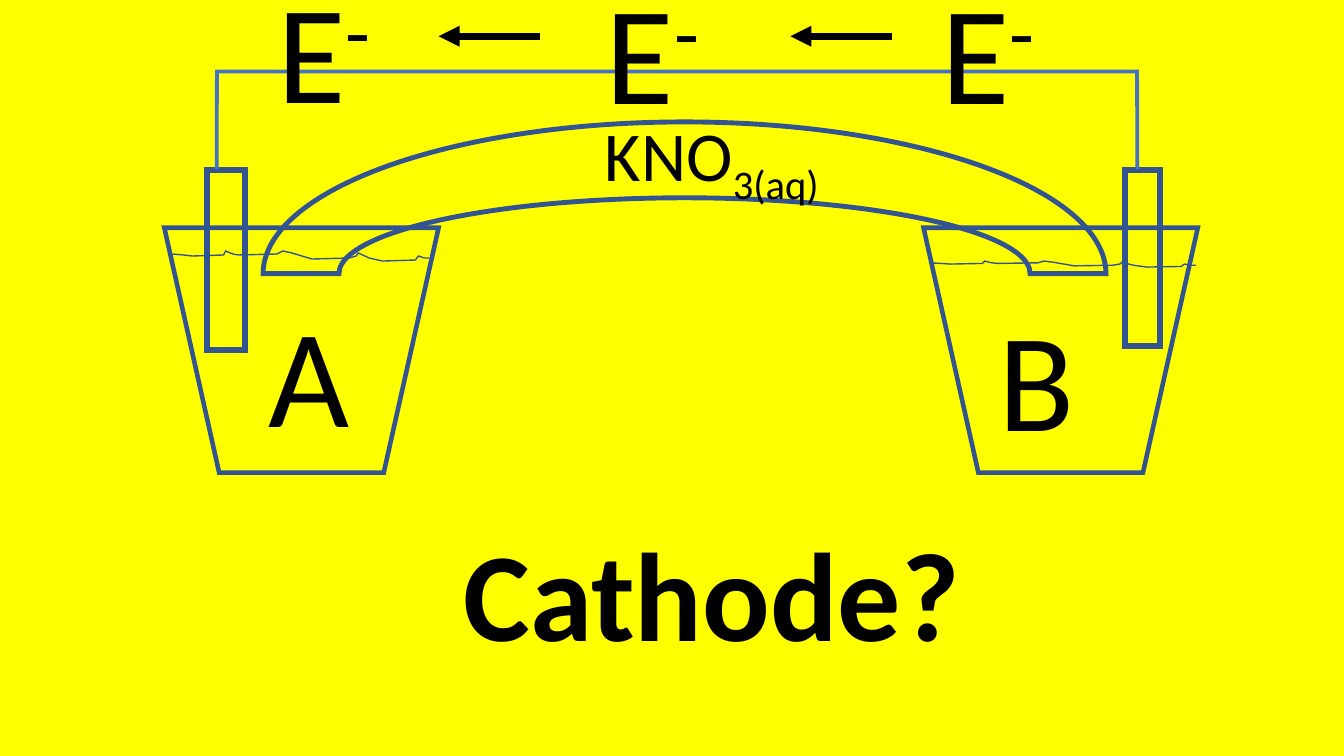
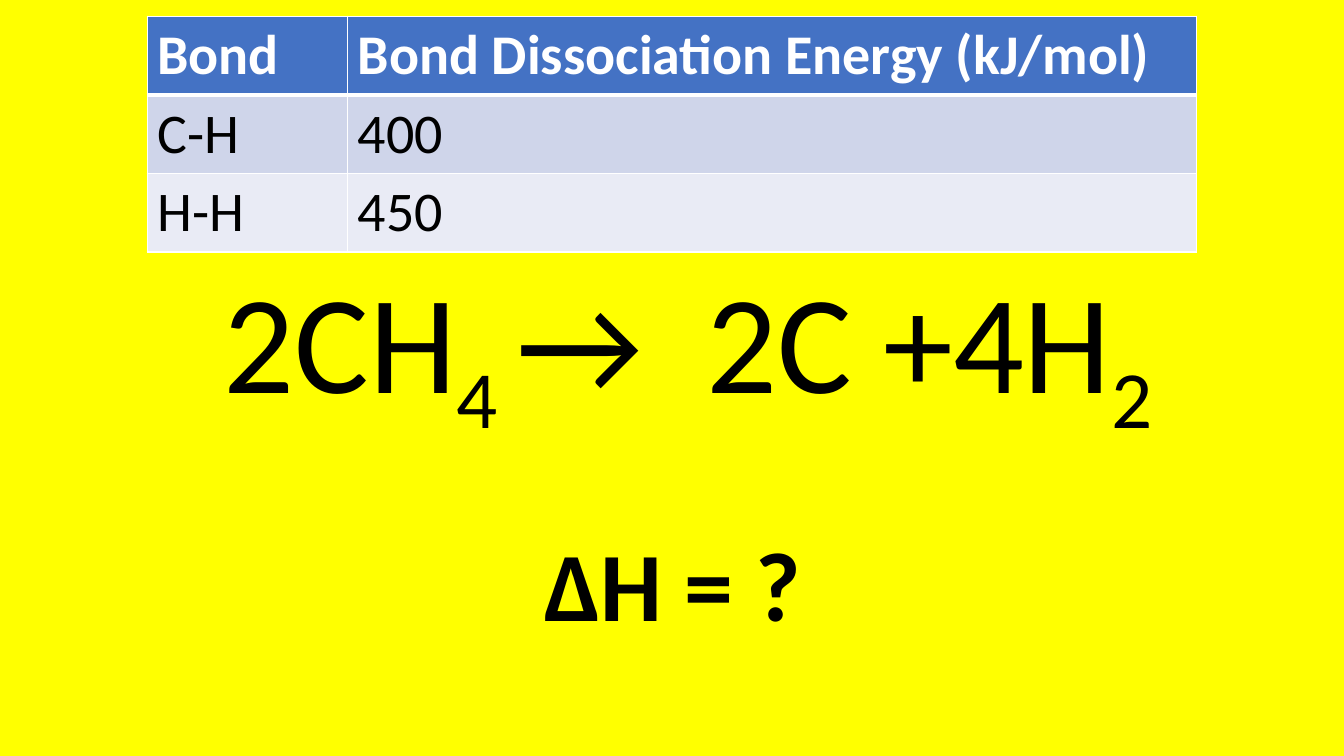
"""Build two chemistry quiz slides: a galvanic cell and a bond energy sum."""
from lxml import etree
from pptx import Presentation
from pptx import util as u
from pptx.dml import color
from pptx.enum import shapes, text
from pptx.oxml import ns

YELLOW, BLACK, WHITE = "FFFF00", "000000", "FFFFFF"
NAVY, BLUE = "325491", "4472C4"
ROW_FILLS = [BLUE, "CFD5EA", "E9EBF5"]
FONT = "Calibri"
SUPER, SUB = 30, -25
WATER = [(0, 3), (11, 4), (20, 5), (51, 4), (53, 0), (60, 3), (66, 4), (104, 3),
         (110, 0), (119, 2), (139, 8), (176, 7), (183, 5), (185, 2), (196, 7),
         (209, 10), (242, 9), (245, 5), (251, 7), (256, 7)]


def rgb(value):
    """Return a colour from a hex string."""
    return color.RGBColor.from_string(value)


def inches(*lengths):
    """Convert several lengths to inches."""
    return [u.Inches(length) for length in lengths]


def add_xml(parent, tag, **attributes):
    """Append a DrawingML element to a parent."""
    return etree.SubElement(parent, ns.qn(tag), attributes)


def write(para, spans, size, bold=False, fill=BLACK):
    """Fill a paragraph with (text, baseline percent) spans."""
    for words, baseline in spans:
        span = para.add_run()
        span.text = words
        span.font.name = FONT
        span.font.size = u.Pt(size)
        span.font.bold = bold
        span.font.color.rgb = rgb(fill)
        if baseline:
            span.font._element.set("baseline", str(baseline * 1000))


def add_slide(deck):
    """Add a title-only slide."""
    return deck.slides.add_slide(deck.slide_layouts[5])


def add_title(slide, top, lines):
    """Place the title with (spans, size, bold, left indent) lines."""
    box = slide.shapes.title
    box.left, box.top, box.width, box.height = inches(0.13, top, 13.08, 2.84)
    frame = box.text_frame
    frame.auto_size = text.MSO_AUTO_SIZE.NONE
    frame.word_wrap = True
    frame.vertical_anchor = text.MSO_ANCHOR.BOTTOM
    for index, (spans, size, bold, indent) in enumerate(lines):
        para = frame.add_paragraph() if index else frame.paragraphs[0]
        para.alignment = text.PP_ALIGN.CENTER
        para.line_spacing = 0.9
        para.space_before = u.Pt(78 if index else 0)
        para._p.get_or_add_pPr().set("marL", str(u.Inches(indent)))
        write(para, spans, size, bold)
    return frame


def add_label(slide, place, spans, size=100):
    """Add a text box with one line."""
    frame = slide.shapes.add_textbox(*inches(*place)).text_frame
    frame.word_wrap = True
    frame.auto_size = text.MSO_AUTO_SIZE.SHAPE_TO_FIT_TEXT
    write(frame.paragraphs[0], spans, size)


def outline(shape, stroke, weight):
    """Give a shape an outline without fill or shadow."""
    shape.shadow.inherit = False
    shape.fill.background()
    shape.line.color.rgb = rgb(stroke)
    shape.line.width = u.Pt(weight)
    add_xml(shape.line._get_or_add_ln(), "a:miter", lim="800000")


def add_outline(slide, kind, place, weight, stroke=NAVY):
    """Add an outlined preset shape."""
    shape = slide.shapes.add_shape(kind, *inches(*place))
    outline(shape, stroke, weight)
    return shape


def add_water(slide, left, top, width, height):
    """Draw a rippled water line inside the given frame."""
    scale = (u.Inches(width) / 256, u.Inches(height) / 10)
    builder = slide.shapes.build_freeform(*WATER[0], scale=scale)
    builder.add_line_segments(WATER[1:], close=False)
    outline(builder.convert_to_shape(*inches(left, top)), NAVY, 1)


def add_arrow(slide, start, end, level):
    """Add a horizontal black arrow."""
    arrow = slide.shapes.add_connector(
        shapes.MSO_CONNECTOR.STRAIGHT, *inches(start, level, end, level))
    arrow.line.color.rgb = rgb(BLACK)
    arrow.line.width = u.Pt(5)
    add_xml(arrow.line._get_or_add_ln(), "a:tailEnd", type="triangle")
    add_xml(arrow._element.spPr, "a:effectLst")


def add_border(cell, side, weight):
    """Draw one white cell border."""
    edge = add_xml(cell._tc.get_or_add_tcPr(), f"a:ln{side}", w=str(u.Pt(weight)))
    add_xml(add_xml(edge, "a:solidFill"), "a:srgbClr", val=WHITE)


def add_table(slide, place, widths, rows):
    """Add a banded table with a bold header row."""
    table = slide.shapes.add_table(len(rows), len(widths), *inches(*place)).table
    for column, width in zip(table.columns, widths):
        column.width = u.Inches(width)
    for r, values in enumerate(rows):
        for c, value in enumerate(values):
            cell = table.cell(r, c)
            weights = {"L": 1, "R": 1, "T": 3 if r == 1 else 1, "B": 1 if r else 3}
            for side, weight in weights.items():
                add_border(cell, side, weight)
            cell.fill.solid()
            cell.fill.fore_color.rgb = rgb(ROW_FILLS[r])
            write(cell.text_frame.paragraphs[0], [(value, 0)], 40,
                  bold=r == 0, fill=BLACK if r else WHITE)


def build_cell_slide(deck):
    """Draw the galvanic cell question."""
    slide = add_slide(deck)
    kinds = shapes.MSO_SHAPE
    add_title(slide, 3.84, [([("Cathode?", 0)], 90, True, 0.78)])
    for left in (1.63, 9.16):
        add_outline(slide, kinds.FLOWCHART_MANUAL_OPERATION, (left, 2.26, 2.72, 2.43), 3.25)
    add_outline(slide, kinds.BLOCK_ARC, (2.61, 1.21, 8.36, 3.01), 3.5)
    for electrode in ((2.05, 1.69, 0.38, 1.78), (11.16, 1.69, 0.35, 1.74)):
        add_outline(slide, kinds.RECTANGLE, electrode, 4.25)
    for letter, left, top in (("A", 2.56, 2.8), ("B", 9.8, 2.84)):
        add_label(slide, (left, top, 0.95, 1.78), [(letter, 0)])
    wire = add_outline(slide, kinds.RIGHT_BRACKET, (6.23, -3.37, 0.97, 9.13), 2.75, BLUE)
    wire.rotation = 270
    wire.adjustments[0] = 0.003
    for left, top in ((5.91, -0.4), (9.24, -0.4), (2.65, -0.41)):
        add_label(slide, (left, top, 1.51, 1.78), [("E", 0), ("-", SUPER)])
    for start in (5.36, 8.85):
        add_arrow(slide, start, start - 1.01, 0.36)
    add_label(slide, (5.9, 1.06, 4.79, 0.94), [("KNO", 0), ("3(aq)", SUB)], 50)
    add_water(slide, 1.71, 2.49, 2.55, 0.1)
    add_water(slide, 9.22, 2.59, 2.64, 0.06)


def build_energy_slide(deck):
    """Show the bond energies and the reaction."""
    slide = add_slide(deck)
    reaction = [("2CH", 0), ("4 ", SUB), ("→", 0), (" 2C +4H", 0), ("2", SUB)]
    frame = add_title(slide, 3.59, [(reaction, 100, False, 0.31),
                                    ([("ΔH = ?", 0)], 70, True, 0)])
    frame.paragraphs[0].runs[2].font._element.set("spc", "2260")
    add_table(slide, (1.46, 0.16, 10.41, 2.34), (1.99, 8.42),
              [("Bond", "Bond Dissociation Energy (kJ/mol)"),
               ("C-H", "400"), ("H-H", "450")])


def main():
    """Build and save the deck."""
    deck = Presentation()
    deck.slide_width, deck.slide_height = inches(13.33, 7.5)
    backdrop = deck.slide_master.background.fill
    backdrop.solid()
    backdrop.fore_color.rgb = rgb(YELLOW)
    build_cell_slide(deck)
    build_energy_slide(deck)
    deck.save("out.pptx")


if __name__ == "__main__":
    main()
